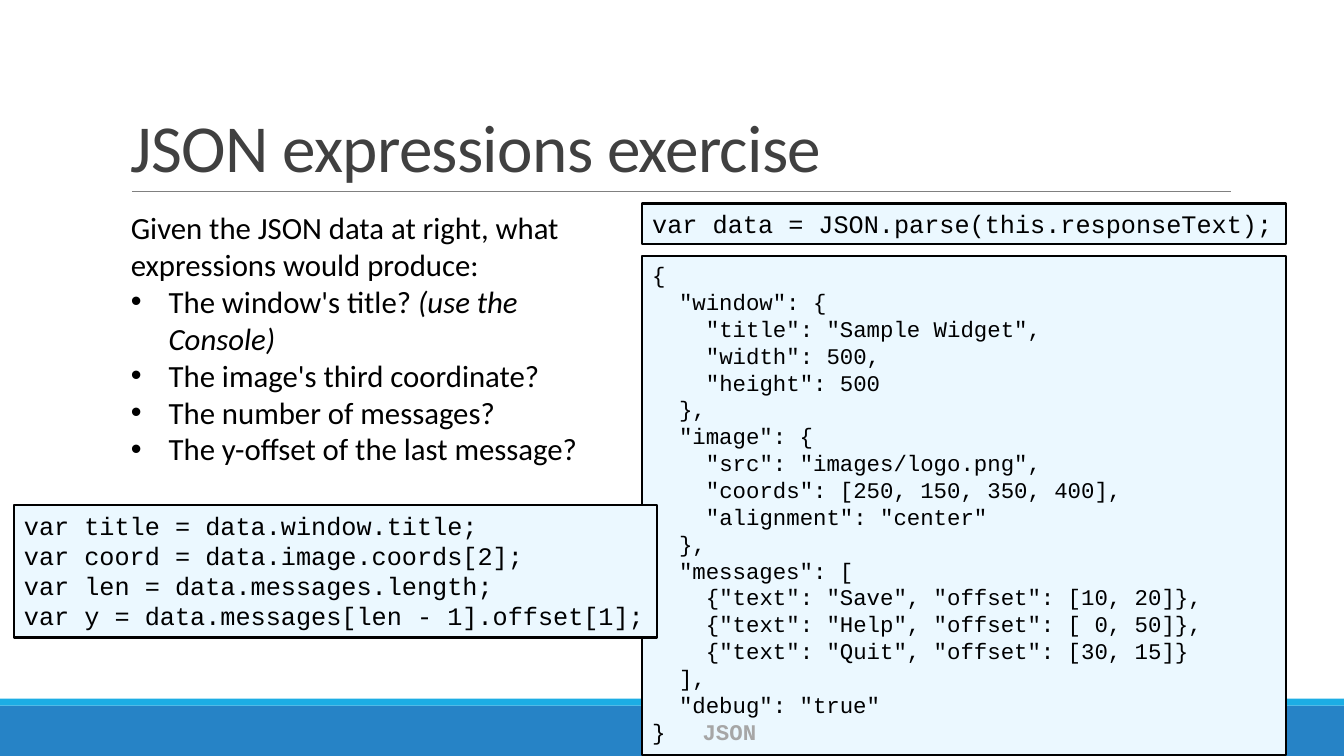
"""Build the slide with the JSON expressions exercise."""
from lxml import etree
from pptx import Presentation
from pptx.dml.color import RGBColor
from pptx.enum.shapes import MSO_CONNECTOR, MSO_SHAPE
from pptx.enum.text import MSO_ANCHOR
from pptx.oxml.ns import qn
from pptx.util import Pt

RECTANGLE = MSO_SHAPE.RECTANGLE
STRAIGHT = MSO_CONNECTOR.STRAIGHT
BOTTOM = MSO_ANCHOR.BOTTOM
CODE_FONT = "Courier New"
JSON_INDENT = 19.2
LABEL_TAB = 384


def color(hex_value):
    return RGBColor.from_string(hex_value)


def write(frame, text, size=18, font="Calibri", ink="000000", bold=False, italic=False,
          same_line=False, indent=0, bullet=None, tab=None, tracking=None, spacing=None):
    paragraph = frame.paragraphs[-1]
    if not same_line:
        if paragraph.runs:
            paragraph = frame.add_paragraph()
        paragraph.line_spacing = spacing
        properties = paragraph._p.get_or_add_pPr()
        properties.set("marL", str(Pt(indent)))
        properties.set("indent", str(-Pt(indent) if bullet else 0))
        if bullet:
            etree.SubElement(properties, qn("a:buFont"), typeface="Arial")
            etree.SubElement(properties, qn("a:buChar"), char=bullet)
        if tab:
            stops = etree.SubElement(properties, qn("a:tabLst"))
            etree.SubElement(stops, qn("a:tab"), pos=str(Pt(tab)), algn="l")
    run = paragraph.add_run()
    run.text = text
    run.font.size = Pt(size)
    run.font.name = font
    run.font.bold = bold
    run.font.italic = italic
    run.font.color.rgb = color(ink)
    if tracking:
        run.font._element.set("spc", str(tracking))


prs = Presentation()
prs.slide_width = Pt(960)
prs.slide_height = Pt(540)
slide = prs.slides.add_slide(prs.slide_layouts[6])
shapes = slide.shapes

for top, height, fill in [(504, 36, "2683C6"), (499, 5, "1CADE4")]:
    footer_band = shapes.add_shape(RECTANGLE, Pt(0), Pt(top), Pt(960), Pt(height))
    footer_band.shadow.inherit = False
    footer_band.fill.solid()
    footer_band.fill.fore_color.rgb = color(fill)
    footer_band.line.fill.background()

title_rule = shapes.add_connector(STRAIGHT, Pt(94.3), Pt(136.8), Pt(879), Pt(136.8))
title_rule.line.color.rgb = color("808080")
title_rule.line.width = Pt(0.5)
etree.SubElement(title_rule._element.spPr, qn("a:effectLst"))

title = shapes.add_textbox(Pt(86.4), Pt(22.3), Pt(792), Pt(114.5)).text_frame
title.word_wrap = True
title.vertical_anchor = BOTTOM
write(title, "JSON expressions exercise", size=48, ink="404040", tracking=-50, spacing=0.85)

questions = shapes.add_textbox(Pt(86.4), Pt(145.4), Pt(365), Pt(193.7)).text_frame
questions.word_wrap = True
write(questions, "Given the JSON data at right, what expressions would produce:", size=22)
for question, hint in [
    ("The window's title?\u00a0", "(use the Console)"),
    ("The image's third coordinate?", None),
    ("The number of messages?", None),
    ("The y-offset of the last message?", None),
]:
    write(questions, question, size=22, indent=27, bullet="•")
    if hint:
        write(questions, hint, size=22, italic=True, same_line=True)

parse_call = [(0, "var data = JSON.parse(this.responseText);")]
json_data = [
    (0, '{'),
    (1, '"window": {'),
    (2, '"title": "Sample Widget",'),
    (2, '"width": 500,'),
    (2, '"height": 500'),
    (1, '},'),
    (1, '"image": {'),
    (2, '"src": "images/logo.png",'),
    (2, '"coords": [250, 150, 350, 400],'),
    (2, '"alignment": "center"'),
    (1, '},'),
    (1, '"messages": ['),
    (2, '{"text": "Save", "offset": [10, 20]},'),
    (2, '{"text": "Help", "offset": [ 0, 50]},'),
    (2, '{"text": "Quit", "offset": [30, 15]}'),
    (1, '],'),
    (1, '"debug": "true"'),
    (0, '}\t'),
]
answers = [
    (0, "var title = data.window.title;"),
    (0, "var coord = data.image.coords[2];"),
    (0, "var len = data.messages.length;"),
    (0, "var y = data.messages[len - 1].offset[1];"),
]

for left, top, height, size, wrap, code, label in [
    (458.8, 145.4, 28.9, 18, False, parse_call, None),
    (458.8, 183, 356.4, 16, True, json_data, "JSON"),
    (10, 360.8, 94.6, 18, True, answers, None),
]:
    code_box = shapes.add_shape(RECTANGLE, Pt(left), Pt(top), Pt(459.6), Pt(height))
    code_box.shadow.inherit = False
    code_box.fill.solid()
    code_box.fill.fore_color.rgb = color("EBF8FF")
    code_box.line.color.rgb = color("000000")
    code_box.line.width = Pt(1.5)
    listing = code_box.text_frame
    listing.word_wrap = wrap
    listing.vertical_anchor = MSO_ANCHOR.TOP
    for level, statement in code:
        write(listing, statement, size=size, font=CODE_FONT, indent=level * JSON_INDENT,
              tab=LABEL_TAB if "\t" in statement else None)
    for paragraph in listing.paragraphs:
        paragraph._p.get_or_add_pPr().set("algn", "l")
    if label:
        write(listing, label, size=size, font=CODE_FONT, ink="A6A6A6", bold=True, same_line=True)

prs.save("out.pptx")
